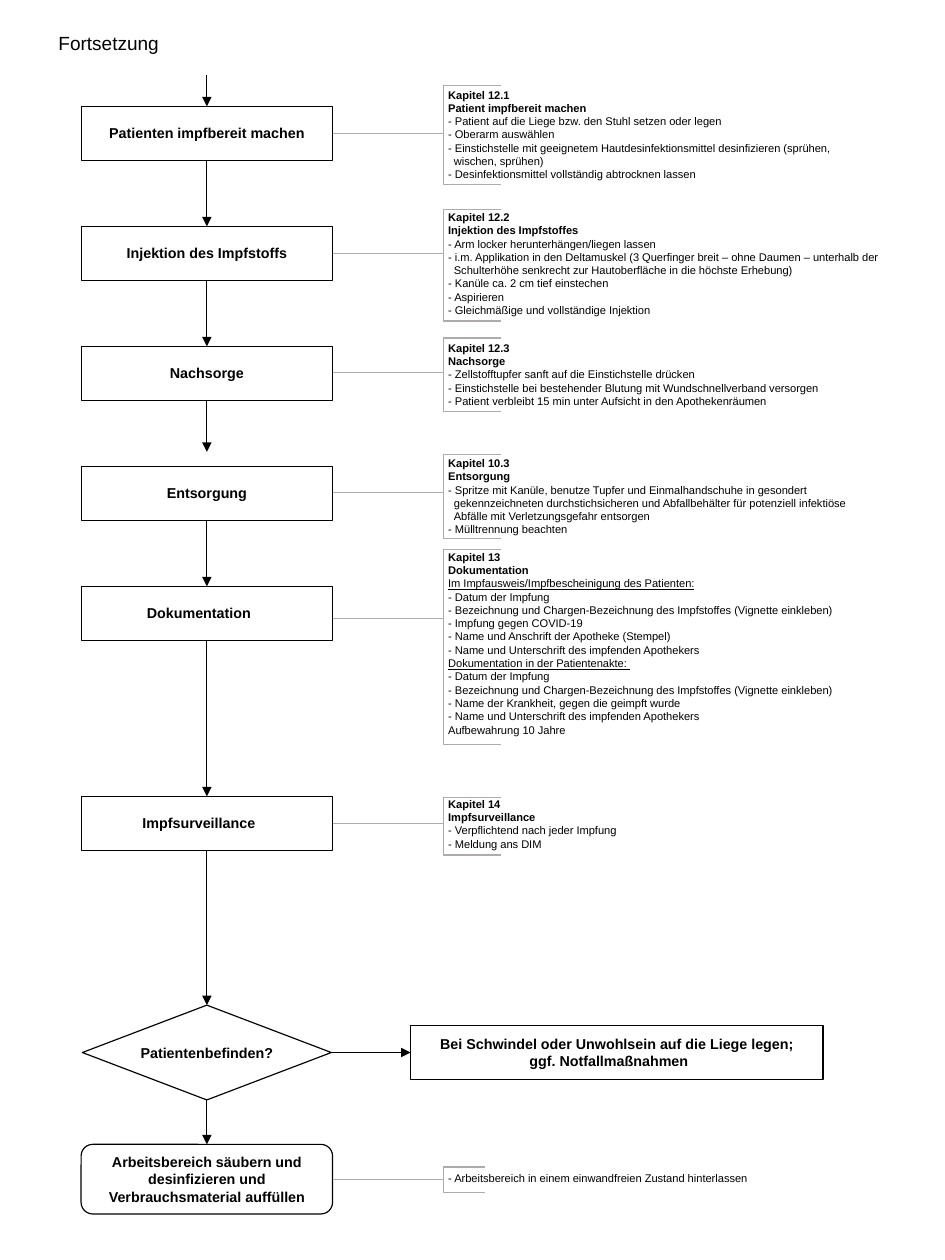
from dataclasses import dataclass

from pptx import Presentation
from pptx import util as u
from pptx.dml.color import RGBColor
from pptx.enum import shapes, text
from pptx.oxml import xmlchemy
from pptx.oxml.ns import qn

BLACK = RGBColor(0x00, 0x00, 0x00)
WHITE = RGBColor(0xFF, 0xFF, 0xFF)
GREY = RGBColor(0xAF, 0xAB, 0xAB)

PAGE_WIDTH, PAGE_HEIGHT = u.Emu(7559675), u.Emu(10080625)
STEP_COLUMNS, STEP_ROWS = 2, 0.45
DIAMOND_ROW, DIAMOND_ROWS = 7.49, 0.79
CLOSING_ROW, CLOSING_ROWS = 8.65, 0.58
HANGING = 0.05
SHIFT = 0.14

STEPS = [
    ("Patienten impfbereit machen", 0, 0),
    ("Injektion des Impfstoffs", 1, 0),
    ("Nachsorge", 2, 0),
    ("Entsorgung", 3, 0),
    ("Dokumentation", 4, SHIFT),
    ("Impfsurveillance", 5.75, SHIFT),
]
SHORT_ARROW_ENDS = {3: 2.88}

NOTES = [
    dict(row=0, link=0.23, rise=-0.17, rows=0.82, lift=-0.2, arm=0.46, lines=[
        "Kapitel 12.1", "Patient impfbereit machen",
        "- Patient auf die Liege bzw. den Stuhl setzen oder legen",
        "- Oberarm auswählen",
        "- Einstichstelle mit geeignetem Hautdesinfektionsmittel desinfizieren (sprühen,",
        "  wischen, sprühen)",
        "- Desinfektionsmittel vollständig abtrocknen lassen"]),
    dict(row=1, link=0.23, rise=-0.14, rows=0.93, lift=-0.18, arm=0.46, lines=[
        "Kapitel 12.2", "Injektion des Impfstoffes",
        "- Arm locker herunterhängen/liegen lassen",
        "- i.m. Applikation in den Deltamuskel (3 Querfinger breit – ohne Daumen – unterhalb der",
        "  Schulterhöhe senkrecht zur Hautoberfläche in die höchste Erhebung)",
        "- Kanüle ca. 2 cm tief einstechen",
        "- Aspirieren",
        "- Gleichmäßige und vollständige Injektion"]),
    dict(row=2, link=0.22, rise=-0.07, rows=0.61, lift=-0.09, arm=0.46, lines=[
        "Kapitel 12.3", "Nachsorge",
        "- Zellstofftupfer sanft auf die Einstichstelle drücken",
        "- Einstichstelle bei bestehender Blutung mit Wundschnellverband versorgen",
        "- Patient verbleibt 15 min unter Aufsicht in den Apothekenräumen"]),
    dict(row=3, link=0.22, rise=-0.1, rows=0.7, lift=-0.13, arm=0.46, lines=[
        "Kapitel 10.3", "Entsorgung",
        "- Spritze mit Kanüle, benutze Tupfer und Einmalhandschuhe in gesondert",
        "  gekennzeichneten durchstichsicheren und Abfallbehälter für potenziell infektiöse",
        "  Abfälle mit Verletzungsgefahr entsorgen",
        "- Mülltrennung beachten"]),
    dict(row=4, link=0.27, rise=-0.31, rows=1.63, lift=-0.35, arm=0.46, lines=[
        "Kapitel 13", "Dokumentation",
        "Im Impfausweis/Impfbescheinigung des Patienten:",
        "- Datum der Impfung",
        "- Bezeichnung und Chargen-Bezeichnung des Impfstoffes (Vignette einkleben)",
        "- Impfung gegen COVID-19",
        "- Name und Anschrift der Apotheke (Stempel)",
        "- Name und Unterschrift des impfenden Apothekers",
        "Dokumentation in der Patientenakte: ",
        "- Datum der Impfung",
        "- Bezeichnung und Chargen-Bezeichnung des Impfstoffes (Vignette einkleben)",
        "- Name der Krankheit, gegen die geimpft wurde",
        "- Name und Unterschrift des impfenden Apothekers",
        "Aufbewahrung 10 Jahre"]),
    dict(row=5.75, link=0.23, rise=0.01, rows=0.48, lift=-0.04, arm=0.46, lines=[
        "Kapitel 14", "Impfsurveillance",
        "- Verpflichtend nach jeder Impfung",
        "- Meldung ans DIM"]),
    dict(row=CLOSING_ROW, link=0.29, rise=0.19, rows=0.21, lift=0.18, arm=0.33, lines=[
        "- Arbeitsbereich in einem einwandfreien Zustand hinterlassen"]),
]


@dataclass
class Grid:
    """A region measured in columns and rows from its top left corner."""
    left: float
    top: float
    column: float
    row: float

    def point(self, column, row):
        """Return the slide position of a grid point."""
        return (u.Inches(self.left + column * self.column),
                u.Inches(self.top + row * self.row))

    def box(self, column, row, columns, rows):
        """Return left, top, width and height of a block of cells."""
        return (*self.point(column, row),
                u.Inches(columns * self.column), u.Inches(rows * self.row))


def write(frame, lines, align=text.PP_ALIGN.LEFT, **formats):
    """Fill a text frame with one paragraph per (text, margins, extra formats)."""
    for index, (line, margins, extra) in enumerate(lines):
        para = frame.paragraphs[0] if index == 0 else frame.add_paragraph()
        para.alignment = align
        for name, inches in margins.items():
            para._p.get_or_add_pPr().set(name, str(int(u.Inches(inches))))
        span = para.add_run()
        span.text = line
        span.font.color.rgb = BLACK
        for name, value in {"name": "Arial", **formats, **extra}.items():
            setattr(span.font, name, value)


def add_line(page, start, end, color, arrow=False):
    """Draw a thin straight line, optionally ending in an arrowhead."""
    line = page.shapes.add_connector(shapes.MSO_CONNECTOR.STRAIGHT, *start, *end)
    line.line.color.rgb = color
    line.line.width = u.Pt(0.5)
    if arrow:
        head = xmlchemy.OxmlElement("a:tailEnd")
        head.set("type", "triangle")
        line.line._get_or_add_ln().append(head)
    line._element.find(qn("p:spPr")).append(xmlchemy.OxmlElement("a:effectLst"))


def add_node(page, kind, box, lines, wrap=True):
    """Draw an outlined flow chart node with bold centred (text, shift) lines."""
    node = page.shapes.add_shape(kind, *box)
    node.shadow.inherit = False
    node.fill.solid()
    node.fill.fore_color.rgb = WHITE
    node.line.color.rgb = BLACK
    node.line.width = u.Pt(0.75)
    node.text_frame.word_wrap = wrap
    node.text_frame.vertical_anchor = text.MSO_ANCHOR.MIDDLE
    write(node.text_frame, [(line, {"marR": shift} if shift else {}, {}) for line, shift in lines],
          text.PP_ALIGN.CENTER, size=u.Pt(9), bold=True)


def add_heading(page, box):
    """Write the heading of the page."""
    frame = page.shapes.add_textbox(*box).text_frame
    frame.word_wrap = False
    write(frame, [("Fortsetzung", {}, {})], size=u.Pt(12))


def add_flow(page, grid):
    """Draw the column of steps with the decision, its outcome and the arrows."""
    kind = shapes.MSO_SHAPE
    for title, row, shift in STEPS:
        add_node(page, kind.FLOWCHART_PROCESS,
                 grid.box(0, row, STEP_COLUMNS, STEP_ROWS), [(title, shift)])
    add_node(page, kind.DIAMOND, grid.box(0.01, DIAMOND_ROW, 1.98, DIAMOND_ROWS),
             [("Patientenbefinden?", 0)], wrap=False)
    add_node(page, kind.FLOWCHART_PROCESS, grid.box(2.62, 7.66, 3.28, STEP_ROWS),
             [("Bei Schwindel oder Unwohlsein auf die Liege legen;", 0),
              ("ggf. Notfallmaßnahmen", SHIFT)])
    add_node(page, kind.FLOWCHART_ALTERNATE_PROCESS,
             grid.box(0, CLOSING_ROW, STEP_COLUMNS, CLOSING_ROWS),
             [("Arbeitsbereich säubern und desinfizieren und Verbrauchsmaterial auffüllen", 0)])
    tops = [row for _, row, _ in STEPS] + [DIAMOND_ROW, CLOSING_ROW]
    bottoms = [row + STEP_ROWS for _, row, _ in STEPS] + [DIAMOND_ROW + DIAMOND_ROWS]
    for start, end in zip([-0.26] + bottoms, tops):
        end = SHORT_ARROW_ENDS.get(end, end)
        add_line(page, grid.point(1, start), grid.point(1, end), BLACK, arrow=True)
    middle = DIAMOND_ROW + DIAMOND_ROWS / 2
    add_line(page, grid.point(1.99, middle), grid.point(2.62, middle), BLACK, arrow=True)


def add_note(page, grid, row, link, rise, rows, lift, arm, lines):
    """Draw one bracketed note beside its step and link the two."""
    spine, top, bottom = 2.88, row + rise, row + rise + rows
    add_line(page, grid.point(STEP_COLUMNS, row + link), grid.point(spine, row + link), GREY)
    builder = page.shapes.build_freeform(*grid.point(spine + arm, top), scale=1.0)
    builder.add_line_segments([grid.point(spine, top), grid.point(spine, bottom),
                               grid.point(spine + arm, bottom)], close=False)
    bracket = builder.convert_to_shape()
    bracket.shadow.inherit = False
    bracket.fill.background()
    bracket.line.color.rgb = GREY
    bracket.line.width = u.Pt(0.75)
    frame = page.shapes.add_textbox(*grid.box(2.83, row + lift, 3.75, rows + 0.06)).text_frame
    frame.word_wrap = True
    write(frame, [(line.lstrip(), {"marL": HANGING} if line.startswith(" ") else {},
                   {"bold": len(lines) > 1 and index < 2,
                    "underline": line.strip().endswith(":")})
                  for index, line in enumerate(lines)], size=u.Pt(7))


def main():
    """Build the flow chart page and save it."""
    deck = Presentation()
    deck.slide_width = PAGE_WIDTH
    deck.slide_height = PAGE_HEIGHT
    page = deck.slides.add_slide(deck.slide_layouts[6])
    grid = Grid(left=0.71, top=0.93, column=1.1, row=1.05)
    add_heading(page, grid.box(-0.27, -0.67, 1, 0.29))
    add_flow(page, grid)
    for note in NOTES:
        add_note(page, grid, **note)
    deck.save("out.pptx")


if __name__ == "__main__":
    main()
